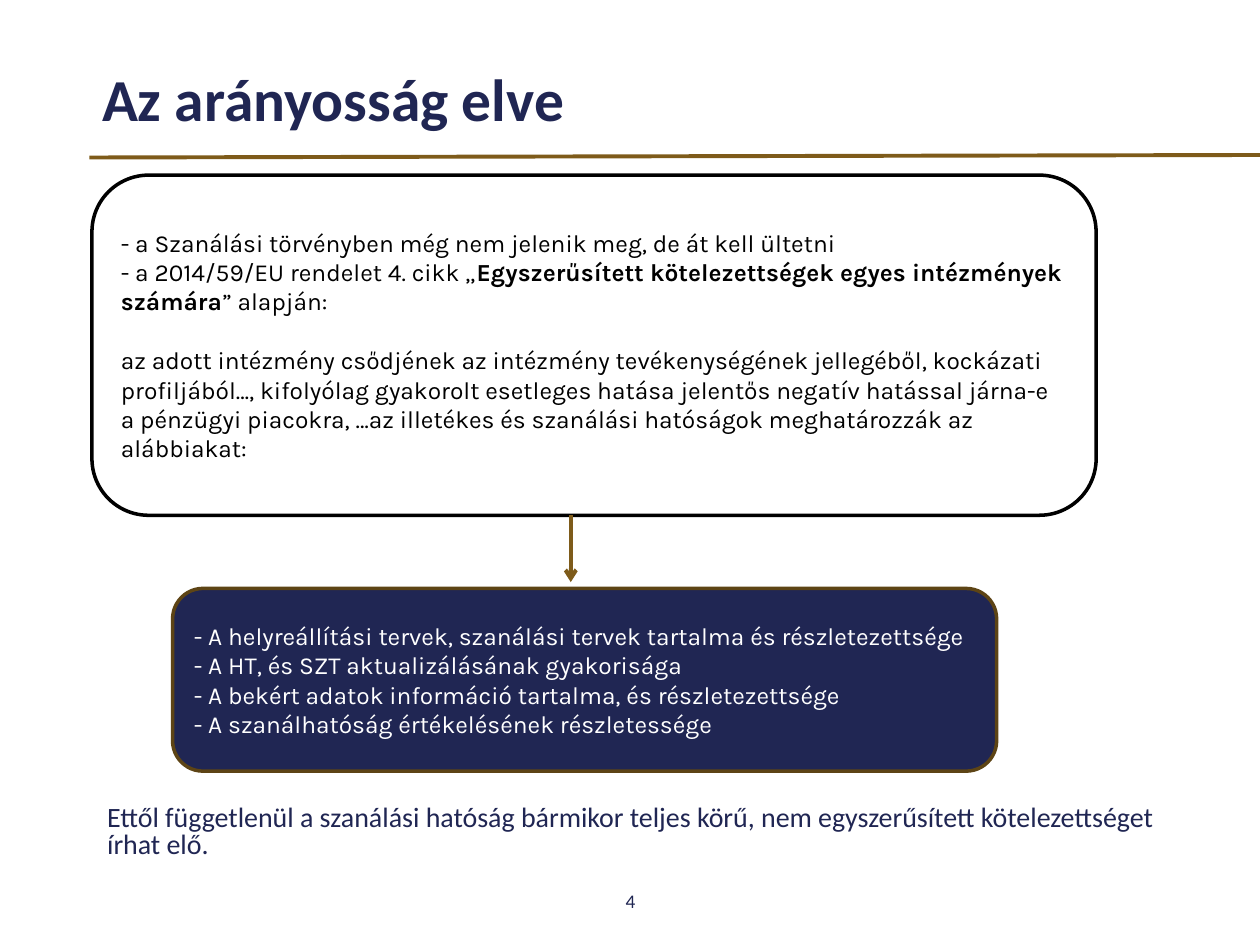
"""Build the slide on the principle of proportionality."""
from dataclasses import dataclass

from lxml import etree
from pptx import Presentation
from pptx.dml.color import RGBColor
from pptx.enum.shapes import MSO_CONNECTOR, MSO_SHAPE
from pptx.enum.text import MSO_ANCHOR, MSO_AUTO_SIZE, PP_ALIGN
from pptx.oxml.ns import qn
from pptx.util import Inches, Pt

ROUNDED = MSO_SHAPE.ROUNDED_RECTANGLE
STRAIGHT = MSO_CONNECTOR.STRAIGHT
MIDDLE = MSO_ANCHOR.MIDDLE
TOP = MSO_ANCHOR.TOP
LEFT = PP_ALIGN.LEFT
CENTER = PP_ALIGN.CENTER
NO_AUTOFIT = MSO_AUTO_SIZE.NONE
TITLE_AND_CONTENT = 1


@dataclass(frozen=True)
class Theme:
    navy: RGBColor = RGBColor(0x20, 0x26, 0x53)
    bronze: RGBColor = RGBColor(0x7E, 0x5B, 0x1A)
    dark_bronze: RGBColor = RGBColor(0x5D, 0x44, 0x15)
    black: RGBColor = RGBColor(0, 0, 0)
    white: RGBColor = RGBColor(0xFF, 0xFF, 0xFF)
    heading_font: str = "Calibri"
    box_font: str = "Karla"
    title_size: float = 34
    note_size: float = 16
    box_size: float = 14
    number_size: float = 11
    paragraph_gap: float = 16.8
    box_line: float = 2
    rule_line: float = 2.25


THEME = Theme()


@dataclass(frozen=True)
class Area:
    left: float
    top: float
    width: float
    height: float

    def lengths(self) -> tuple:
        return tuple(map(Inches, (self.left, self.top, self.width, self.height)))


@dataclass(frozen=True)
class Style:
    font: str
    size: float
    color: RGBColor
    bold: bool = False


@dataclass(frozen=True)
class Paragraph:
    phrases: tuple[str, ...]
    bold_phrase: int = -1
    space_before: float = 0


@dataclass(frozen=True)
class Box:
    area: Area
    fill: RGBColor
    line: RGBColor
    text_color: RGBColor
    paragraphs: tuple[Paragraph, ...]


@dataclass(frozen=True)
class Line:
    start: tuple[float, float]
    end: tuple[float, float]
    arrow: bool = False


BOXES = (
    Box(Area(0.73, 1.39, 7.97, 2.7), THEME.white, THEME.black, THEME.black, (
        Paragraph(("- a Szanálási törvényben még nem jelenik meg, de át kell ültetni",)),
        Paragraph(("- a 2014/59/EU rendelet 4. cikk „",
                   "Egyszerűsített kötelezettségek egyes intézmények számára",
                   "” alapján:"), bold_phrase=1),
        Paragraph(("az adott intézmény csődjének az intézmény tevékenységének jellegéből, "
                   "kockázati profiljából…, kifolyólag gyakorolt esetleges hatása jelentős "
                   "negatív hatással járna-e a pénzügyi piacokra, …az illetékes és szanálási "
                   "hatóságok meghatározzák az alábbiakat:",),
                  space_before=THEME.paragraph_gap),
    )),
    Box(Area(1.37, 4.67, 6.54, 1.45), THEME.navy, THEME.dark_bronze, THEME.white, (
        Paragraph(("- A helyreállítási tervek, szanálási tervek tartalma és részletezettsége",)),
        Paragraph(("- A HT, és SZT aktualizálásának gyakorisága",)),
        Paragraph(("- A bekért adatok információ tartalma, és részletezettsége",)),
        Paragraph(("- A szanálhatóság értékelésének részletessége",)),
    )),
)
LINES = (
    Line((0.71, 1.25), (10.04, 1.23)),
    Line((4.53, 4.09), (4.53, 4.62), arrow=True),
)


def format_run(run, style: Style) -> None:
    """Apply a text style to one run."""
    run.font.name = style.font
    run.font.size = Pt(style.size)
    run.font.bold = style.bold
    run.font.color.rgb = style.color


def set_text(shape, area: Area, text: str, style: Style, anchor, alignment):
    """Place a shape holding one formatted paragraph and return the paragraph."""
    shape.left, shape.top, shape.width, shape.height = area.lengths()
    frame = shape.text_frame
    frame.text = text
    frame.word_wrap = True
    frame.auto_size = NO_AUTOFIT
    frame.vertical_anchor = anchor
    paragraph = frame.paragraphs[0]
    paragraph.alignment = alignment
    format_run(paragraph.runs[0], style)
    return paragraph


def remove_bullet(paragraph) -> None:
    """Turn off the bullet and hanging indent of a paragraph."""
    properties = paragraph._p.get_or_add_pPr()
    properties.set("marL", "0")
    properties.set("indent", "0")
    etree.SubElement(properties, qn("a:buNone"))


def add_box(slide, box: Box) -> None:
    """Draw a rounded box with its paragraphs."""
    shape = slide.shapes.add_shape(ROUNDED, *box.area.lengths())
    shape.shadow.inherit = False
    shape.fill.solid()
    shape.fill.fore_color.rgb = box.fill
    shape.line.color.rgb = box.line
    shape.line.width = Pt(THEME.box_line)
    frame = shape.text_frame
    frame.word_wrap = True
    frame.vertical_anchor = MIDDLE
    for index, content in enumerate(box.paragraphs):
        paragraph = frame.add_paragraph() if index else frame.paragraphs[0]
        paragraph.alignment = LEFT
        paragraph.space_before = Pt(content.space_before)
        for position, phrase in enumerate(content.phrases):
            run = paragraph.add_run()
            run.text = phrase
            format_run(run, Style(THEME.box_font, THEME.box_size, box.text_color,
                                  position == content.bold_phrase))


def add_line(slide, line: Line) -> None:
    """Draw a bronze line, with an arrowhead if asked for."""
    connector = slide.shapes.add_connector(STRAIGHT, *map(Inches, line.start + line.end))
    connector.line.color.rgb = THEME.bronze
    connector.line.width = Pt(THEME.rule_line)
    properties = connector._element.spPr
    if line.arrow:
        etree.SubElement(properties.find(qn("a:ln")), qn("a:tailEnd"), type="arrow")
    etree.SubElement(properties, qn("a:effectLst"))


def main() -> None:
    """Create and save the presentation."""
    presentation = Presentation()
    presentation.slide_width = Inches(10)
    presentation.slide_height = Inches(7.5)
    slide = presentation.slides.add_slide(presentation.slide_layouts[TITLE_AND_CONTENT])

    title = set_text(slide.shapes.title, Area(0.71, 0.4, 8.63, 0.83), "Az arányosság elve",
                     Style(THEME.heading_font, THEME.title_size, THEME.navy, True), MIDDLE, LEFT)
    title.line_spacing = 0.9

    note = set_text(slide.placeholders[1], Area(0.75, 6.35, 8.62, 0.55),
                    "Ettől függetlenül a szanálási hatóság bármikor teljes körű, "
                    "nem egyszerűsített kötelezettséget írhat elő.",
                    Style(THEME.heading_font, THEME.note_size, THEME.navy), TOP, LEFT)
    note.line_spacing = 0.8
    note.space_before = Pt(7.5)
    remove_bullet(note)

    number_area = Area(3.88, 6.95, 2.25, 0.4)
    set_text(slide.shapes.add_textbox(*number_area.lengths()), number_area, "4",
             Style(THEME.heading_font, THEME.number_size, THEME.navy), MIDDLE, CENTER)

    for box in BOXES:
        add_box(slide, box)
    for line in LINES:
        add_line(slide, line)
    presentation.save("out.pptx")


if __name__ == "__main__":
    main()
